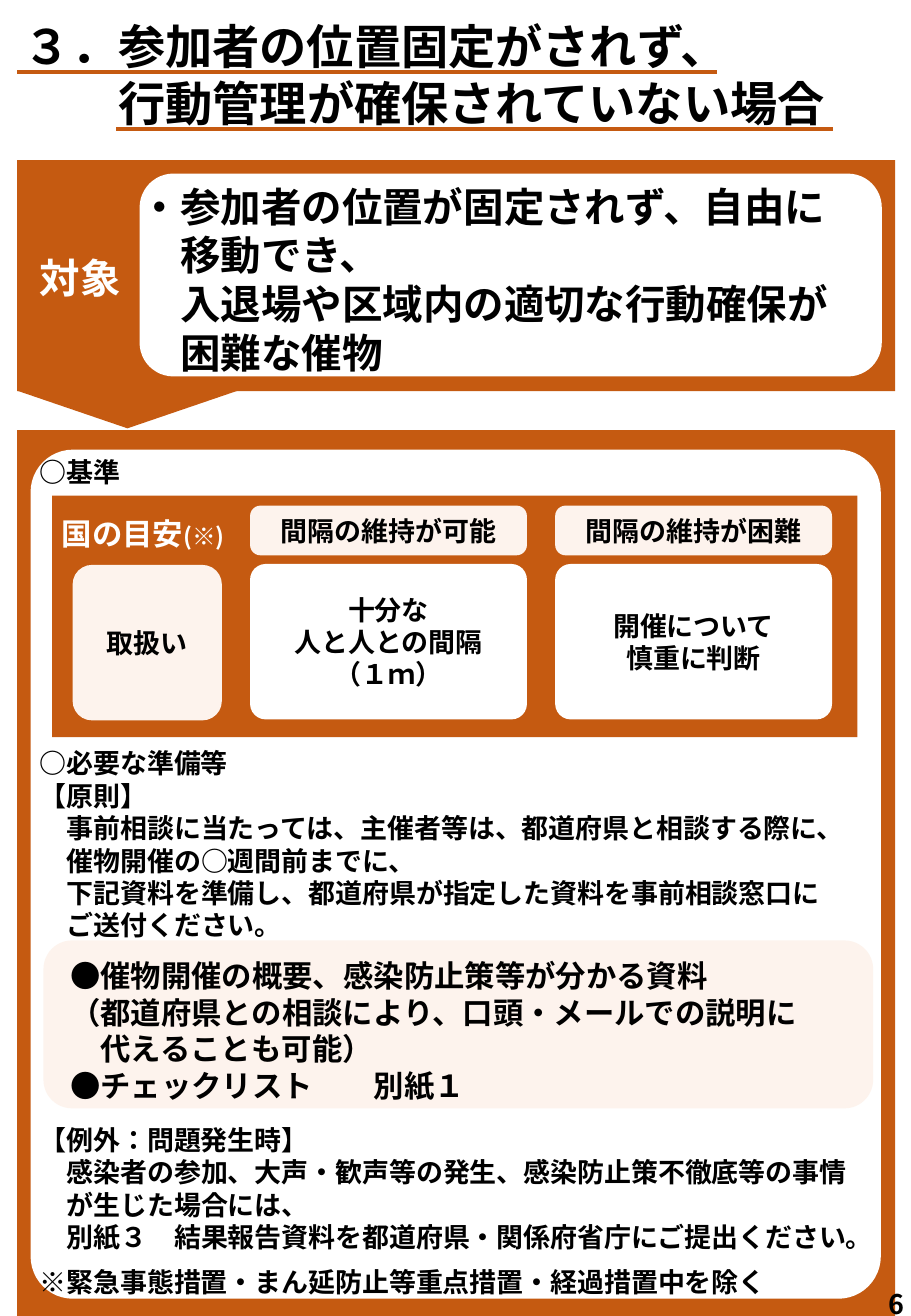
from dataclasses import dataclass
from typing import Optional
from lxml.etree import SubElement
from pptx import Presentation
from pptx.dml.color import RGBColor
from pptx.enum.lang import MSO_LANGUAGE_ID as Lang
from pptx.enum.shapes import MSO_CONNECTOR as Link, MSO_SHAPE as Kind
from pptx.enum.text import MSO_ANCHOR as Anchor, MSO_AUTO_SIZE as Fit, PP_ALIGN as Align
from pptx.oxml.ns import qn
from pptx.util import Cm, Pt

FONT = "Noto Sans CJK JP"
RUST = RGBColor(0xC5, 0x5A, 0x11)
PALE = RGBColor(0xFD, 0xF3, 0xED)
WHITE = RGBColor(0xFF, 0xFF, 0xFF)
BLACK = RGBColor(0x00, 0x00, 0x00)


@dataclass
class Box:
    left: float
    top: float
    width: float
    height: float

    def place(self) -> tuple:
        return Cm(self.left), Cm(self.top), Cm(self.width), Cm(self.height)


@dataclass
class Line:
    text: str
    size: float = 16
    indent: float = 0
    gap: float = 0
    tail: str = ""
    small: float = 14
    tab: Optional[float] = None


@dataclass
class Card:
    box: Box
    fill: RGBColor
    round: float
    lines: list


def add_run(para, text: str, size: float, color: RGBColor) -> None:
    run = para.add_run()
    run.text = text
    font = run.font
    font.name, font.size, font.bold = FONT, Pt(size), True
    font.language_id = Lang.JAPANESE
    font.color.rgb = color
    SubElement(run._r.get_or_add_rPr(), qn("a:ea"), typeface=FONT)


def write(frame, lines: list, color: RGBColor = BLACK, align=Align.LEFT) -> None:
    for num, line in enumerate(lines):
        para = frame.paragraphs[0] if num == 0 else frame.add_paragraph()
        para.alignment = align
        para.line_spacing = Pt(line.size * 1.2)
        para.space_before = Pt(line.gap)
        props = para._p.get_or_add_pPr()
        props.set("marL", str(Pt(line.indent * line.size)))
        props.set("indent", "0")
        if line.tab:
            tabs = SubElement(props, qn("a:tabLst"))
            SubElement(tabs, qn("a:tab"), pos=str(Cm(line.tab)), algn="l")
        add_run(para, line.text, line.size, color)
        if line.tail:
            add_run(para, line.tail, line.small, color)


def set_frame(frame, side: float, top: float, base: float, anchor) -> None:
    frame.word_wrap = True
    frame.auto_size = Fit.NONE
    frame.vertical_anchor = anchor
    frame.margin_left = frame.margin_right = Cm(side)
    frame.margin_top, frame.margin_bottom = Cm(top), Cm(base)


def add_text(slide, box: Box, lines: list, color: RGBColor = BLACK, side: float = 0.25) -> None:
    frame = slide.shapes.add_textbox(*box.place()).text_frame
    set_frame(frame, side, 0.13, 0.13, Anchor.TOP)
    write(frame, lines, color)


def add_block(slide, kind, box: Box, fill: RGBColor, round: Optional[float] = None):
    shape = slide.shapes.add_shape(kind, *box.place())
    shape.shadow.inherit = False
    shape.fill.solid()
    shape.fill.fore_color.rgb = fill
    shape.line.fill.background()
    if round is not None:
        shape.adjustments[0] = round
    return shape


def add_card(slide, card: Card) -> None:
    shape = add_block(slide, Kind.ROUNDED_RECTANGLE, card.box, card.fill, card.round)
    set_frame(shape.text_frame, 0.18, 0.1, 0.1, Anchor.MIDDLE)
    write(shape.text_frame, card.lines, align=Align.CENTER)


def add_rule(slide, left: float, right: float, top: float) -> None:
    rule = slide.shapes.add_connector(Link.STRAIGHT, Cm(left), Cm(top), Cm(right), Cm(top))
    rule.line.color.rgb = RUST
    rule.line.width = Pt(2.25)
    SubElement(rule._element.spPr, qn("a:effectLst"))


def add_title(slide) -> None:
    title = slide.shapes.title
    title.left, title.top, title.width, title.height = Box(0.25, 0.24, 18.8, 2.64).place()
    set_frame(title.text_frame, 0.25, 0.13, 0.13, Anchor.TOP)
    write(title.text_frame, [
        Line("３．参加者の位置固定がされず、", 28),
        Line("行動管理が確保されていない場合", 28, 2),
    ])
    add_rule(slide, 0.36, 14.99, 1.5)
    add_rule(slide, 2.43, 17.42, 2.69)


def add_target(slide) -> None:
    point = add_block(slide, Kind.PENTAGON, Box(1.88, 5.87, 1.57, 4.6), RUST)
    point.rotation = 90
    add_block(slide, Kind.RECTANGLE, Box(0.36, 3.35, 18.36, 4.83), RUST)
    add_block(slide, Kind.ROUNDED_RECTANGLE, Box(2.92, 3.63, 15.52, 4.24), WHITE)
    add_text(slide, Box(0.58, 5.15, 3.02, 1.27), [Line("対象", 24)], WHITE)
    add_text(slide, Box(2.67, 3.67, 15.8, 4.37), [
        Line("・参加者の位置が固定されず、自由に", 24),
        Line("移動でき、", 24, 1),
        Line("入退場や区域内の適切な行動確保が", 24, 1),
        Line("困難な催物", 24, 1),
    ])


def add_body(slide) -> None:
    add_block(slide, Kind.RECTANGLE, Box(0.36, 8.99, 18.36, 18.52), RUST)
    add_block(slide, Kind.ROUNDED_RECTANGLE, Box(0.64, 9.4, 17.78, 17.75), WHITE, 0.05)
    add_block(slide, Kind.ROUNDED_RECTANGLE, Box(0.91, 19.66, 17.35, 3.51), PALE, 0.17)
    add_text(slide, Box(0.58, 9.39, 18.47, 18), [
        Line("○基準"),
        Line("○必要な準備等", gap=153.6),
        Line("【原則】"),
        Line("事前相談に当たっては、主催者等は、都道府県と相談する際に、", indent=1),
        Line("催物開催の○週間前までに、", indent=1),
        Line("下記資料を準備し、都道府県が指定した資料を事前相談窓口に", indent=1),
        Line("ご送付ください。", indent=1),
        Line("●催物開催の概要、感染防止策等が分かる資料", 18, 1, 9.6),
        Line("（都道府県との相談により、口頭・メールでの説明に", 18, 1),
        Line("代えることも可能）", 18, 2),
        Line("　●チェックリスト\t　別紙１", 18, tab=6.35),
        Line("【例外：問題発生時】", gap=12),
        Line("感染者の参加、大声・歓声等の発生、感染防止策不徹底等の事情", indent=1),
        Line("が生じた場合には、", indent=1),
        Line("別紙３　結果報告資料を都道府県・関係府省庁にご提出ください。", indent=1),
        Line("※緊急事態措置・まん延防止等重点措置・経過措置中を除く", gap=7.2),
    ])


def add_guide(slide) -> None:
    add_block(slide, Kind.RECTANGLE, Box(1.09, 10.36, 16.84, 5.05), RUST)
    add_card(slide, Card(Box(1.52, 11.81, 3.12, 3.25), PALE, 0.13, [Line("取扱い")]))
    cases = [
        ("間隔の維持が可能", ["十分な", "人と人との間隔", "（１ｍ）"]),
        ("間隔の維持が困難", ["開催について", "慎重に判断"]),
    ]
    for col, (head, rows) in enumerate(cases):
        left = 5.23 + col * 6.38
        add_card(slide, Card(Box(left, 10.57, 5.79, 1.04), PALE, 0.21, [Line(head)]))
        lines = [Line(row) for row in rows]
        add_card(slide, Card(Box(left, 11.79, 5.79, 3.25), WHITE, 0.1, lines))
    add_text(slide, Box(1.04, 10.63, 4.55, 1.02), [Line("国の目安", 18, tail="(※)")], WHITE)


def main() -> None:
    deck = Presentation()
    deck.slide_width, deck.slide_height = Cm(19.05), Cm(27.51)
    slide = deck.slides.add_slide(deck.slide_layouts[5])
    add_title(slide)
    add_target(slide)
    add_body(slide)
    add_guide(slide)
    add_text(slide, Box(18.59, 26.78, 0.46, 0.69), [Line("6")], side=0)
    deck.save("out.pptx")


if __name__ == "__main__":
    main()
